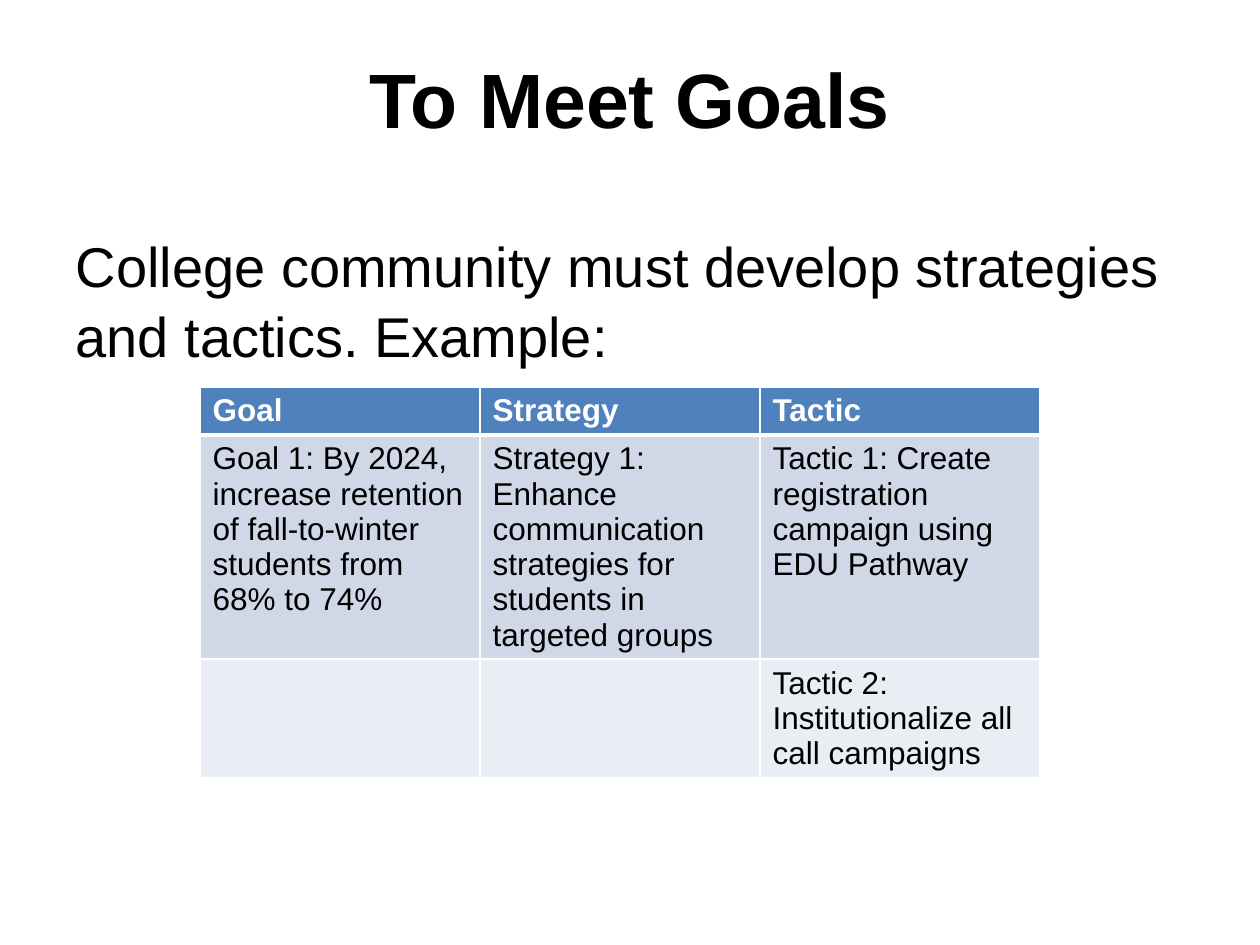
from lxml.etree import SubElement
from pptx import Presentation
from pptx.dml.color import RGBColor
from pptx.enum.text import MSO_ANCHOR, MSO_AUTO_SIZE, PP_ALIGN
from pptx.oxml.ns import qn
from pptx.util import Emu, Pt

PX_PER_INCH = 126
FONT = "Arial"
COLORS = {
    "background": "FFFFFF",
    "text": "000000",
    "header": "4F81BD",
    "header_text": "FFFFFF",
    "odd_row": "D0D8E8",
    "even_row": "E9EDF4",
    "border": "FFFFFF",
}
PLAN = [
    ["Goal", "Strategy", "Tactic"],
    [
        "Goal 1: By 2024, increase retention of fall-to-winter students from 68% to 74%",
        "Strategy 1: Enhance communication strategies for students in targeted groups",
        "Tactic 1: Create registration campaign using EDU Pathway",
    ],
    ["", "", "Tactic 2: Institutionalize all call campaigns"],
]
ROW_HEIGHTS = [48, 224, 118]
ROW_FILLS = ["header", "odd_row", "even_row"]


def px(length):
    return Emu(round(length * 914400 / PX_PER_INCH))


def color(key):
    return RGBColor.from_string(COLORS[key])


def set_font(paragraph, size, color_key, bold=False):
    font = paragraph.font
    font.name, font.size, font.bold = FONT, Pt(size), bold
    font.color.rgb = color(color_key)


def fill_placeholder(placeholder, box, text, margin_top):
    """Move a placeholder to its box, write its text and return the paragraph."""
    placeholder.left, placeholder.top, placeholder.width, placeholder.height = map(px, box)
    frame = placeholder.text_frame
    frame.text = text
    frame.word_wrap = True
    frame.auto_size = MSO_AUTO_SIZE.NONE
    frame.vertical_anchor = MSO_ANCHOR.TOP
    frame.margin_top = px(margin_top)
    return frame.paragraphs[0]


def add_title(slide, box):
    heading = fill_placeholder(slide.shapes.title, box, "To Meet Goals", 14)
    heading.alignment = PP_ALIGN.CENTER
    set_font(heading, 44, "text", bold=True)


def add_statement(slide, box):
    statement = fill_placeholder(
        slide.placeholders[1], box,
        "College community must develop strategies and tactics. Example:", 9)
    properties = statement._p.get_or_add_pPr()
    properties.set("marL", "0")
    properties.set("indent", "0")
    SubElement(properties, qn("a:buNone"))
    statement.space_before = Pt(0)
    statement.line_spacing = 1.04
    set_font(statement, 32, "text")


def set_borders(cell, bottom_width):
    properties = cell._tc.get_or_add_tcPr()
    widths = {"a:lnL": 1, "a:lnR": 1, "a:lnT": 1, "a:lnB": bottom_width}
    for position, (side, width) in enumerate(widths.items()):
        line = SubElement(properties, qn(side), w=str(Pt(width)))
        solid = SubElement(line, qn("a:solidFill"))
        SubElement(solid, qn("a:srgbClr"), val=COLORS["border"])
        properties.insert(position, line)


def add_plan_table(slide, box):
    table = slide.shapes.add_table(len(PLAN), len(PLAN[0]), *map(px, box)).table
    for column in table.columns:
        column.width = px(box[2] / len(PLAN[0]))
    for r, (texts, height, fill) in enumerate(zip(PLAN, ROW_HEIGHTS, ROW_FILLS)):
        is_header = r == 0
        table.rows[r].height = px(height)
        for c, text in enumerate(texts):
            cell = table.cell(r, c)
            cell.text = text
            cell.fill.solid()
            cell.fill.fore_color.rgb = color(fill)
            # The rule below the header is heavy on both sides of the shared edge.
            set_borders(cell, 3 if is_header else 1)
            if r == 1:
                cell._tc.tcPr.find(qn("a:lnT")).set("w", str(Pt(3)))
            set_font(cell.text_frame.paragraphs[0], 18,
                     "header_text" if is_header else "text", bold=is_header)


def main():
    presentation = Presentation()
    presentation.slide_width, presentation.slide_height = px(1260), px(945)
    slide = presentation.slides.add_slide(presentation.slide_layouts[1])
    slide.background.fill.solid()
    slide.background.fill.fore_color.rgb = color("background")
    add_title(slide, (63, 38, 1134, 157))
    add_statement(slide, (63, 220, 1134, 624))
    add_plan_table(slide, (200, 387, 840, sum(ROW_HEIGHTS)))
    presentation.save("out.pptx")


if __name__ == "__main__":
    main()
